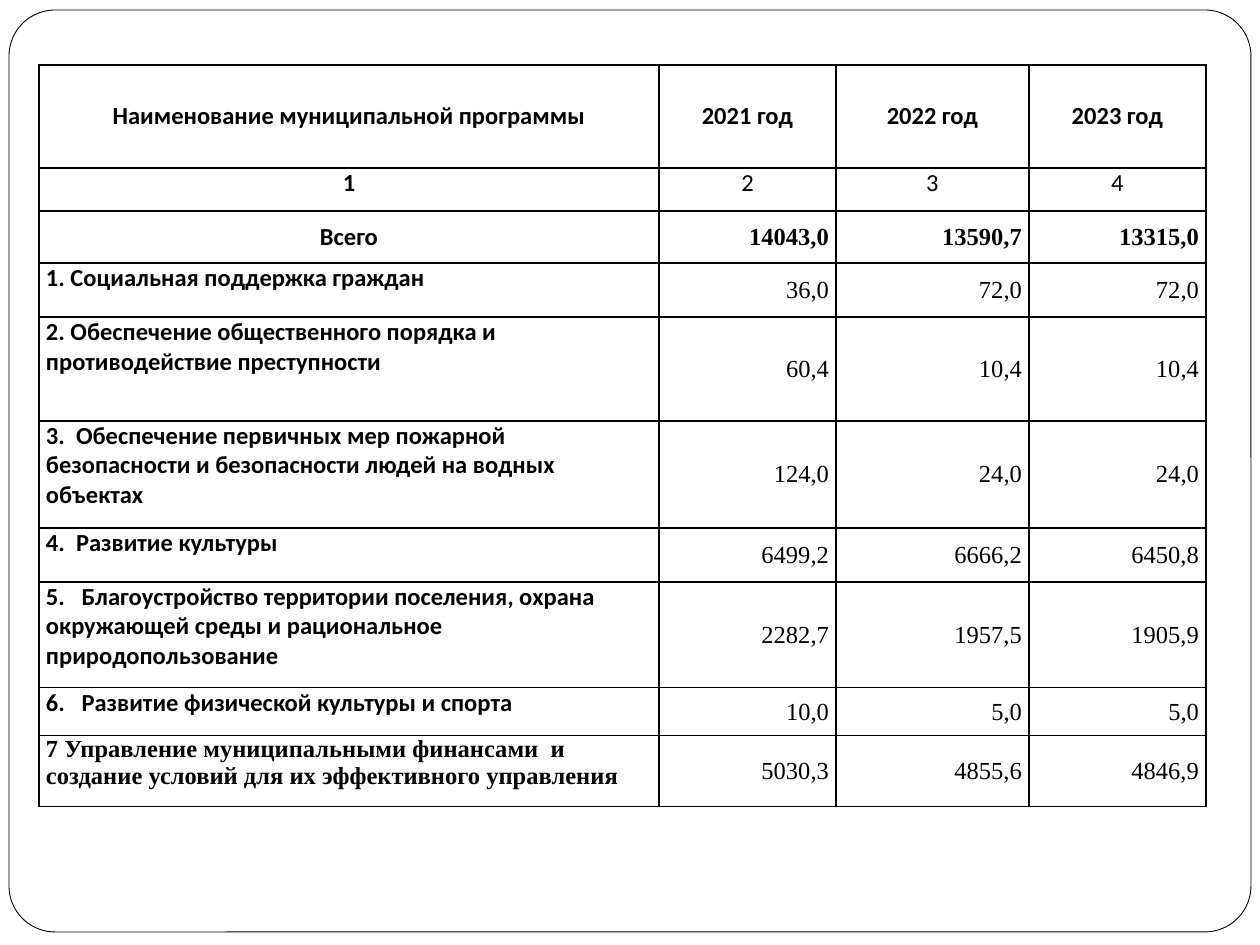
from lxml import etree
from pptx import Presentation
from pptx.dml.color import RGBColor
from pptx.enum.shapes import MSO_SHAPE
from pptx.enum.text import MSO_ANCHOR, PP_ALIGN
from pptx.oxml.ns import qn
from pptx.util import Pt

PX = 914400 / 126
ROUND_RECT = MSO_SHAPE.ROUNDED_RECTANGLE
TOP, MIDDLE = MSO_ANCHOR.TOP, MSO_ANCHOR.MIDDLE
LEFT, CENTER, RIGHT = PP_ALIGN.LEFT, PP_ALIGN.CENTER, PP_ALIGN.RIGHT
COLORS = {"paper": "FFFFFF", "ink": "000000"}
SANS, SERIF = "Calibri", "Times New Roman"
BLANK_LAYOUT = 6

COLUMN_WIDTHS = [620, 177, 193, 177]
ROW_HEIGHTS = [103, 43, 52, 54, 104, 107, 54, 106, 48, 71]
HEADER_ROW, NUMBER_ROW, TOTAL_ROW = 0, 1, 2
LAST_ROW = len(ROW_HEIGHTS) - 1
BUDGET = [
    ["Наименование муниципальной программы", "2021 год", "2022 год", "2023 год"],
    ["1", "2", "3", "4"],
    ["Всего", "14043,0", "13590,7", "13315,0"],
    ["1. Социальная поддержка граждан", "36,0", "72,0", "72,0"],
    ["2. Обеспечение общественного порядка и противодействие преступности",
     "60,4", "10,4", "10,4"],
    ["3.  Обеспечение первичных мер пожарной безопасности и безопасности "
     "людей на водных объектах", "124,0", "24,0", "24,0"],
    ["4.  Развитие культуры", "6499,2", "6666,2", "6450,8"],
    ["5.   Благоустройство территории поселения, охрана окружающей среды и "
     "рациональное природопользование", "2282,7", "1957,5", "1905,9"],
    ["6.   Развитие физической культуры и спорта", "10,0", "5,0", "5,0"],
    ["7 Управление муниципальными финансами  и создание условий для их "
     "эффективного управления", "5030,3", "4855,6", "4846,9"],
]


def px(length):
    return round(length * PX)


def color(name):
    return RGBColor.from_string(COLORS[name])


def add_frame(slide, left, top, width, height):
    frame = slide.shapes.add_shape(ROUND_RECT, px(left), px(top), px(width), px(height))
    frame.adjustments[0] = 0.05
    frame.shadow.inherit = False
    frame.fill.solid()
    frame.fill.fore_color.rgb = color("paper")
    frame.line.color.rgb = color("ink")
    frame.line.width = Pt(0.5)


def add_borders(cell):
    properties = cell._tc.get_or_add_tcPr()
    for position, side in enumerate(("a:lnL", "a:lnR", "a:lnT", "a:lnB")):
        line = etree.Element(qn(side), w=str(Pt(1)))
        fill = etree.SubElement(line, qn("a:solidFill"))
        etree.SubElement(fill, qn("a:srgbClr"), val=COLORS["ink"])
        properties.insert(position, line)


def cell_style(row, column):
    is_label = column == 0
    is_program = row > TOTAL_ROW
    if row <= NUMBER_ROW or (is_label and not is_program):
        align = CENTER
    else:
        align = LEFT if is_label else RIGHT
    anchor = TOP if row == NUMBER_ROW or (is_label and is_program) else MIDDLE
    bold = is_label or row in (HEADER_ROW, TOTAL_ROW)
    is_serif = row == LAST_ROW or (not is_label and row >= TOTAL_ROW)
    return align, anchor, bold, SERIF if is_serif else SANS


def fill_cell(cell, text, align, anchor, bold, font_name):
    cell.text = text
    cell.vertical_anchor = anchor
    cell.margin_left = cell.margin_right = px(7)
    cell.margin_top = cell.margin_bottom = 0
    cell.fill.background()
    add_borders(cell)
    paragraph = cell.text_frame.paragraphs[0]
    paragraph.alignment = align
    paragraph.font.name = font_name
    paragraph.font.size = Pt(14)
    paragraph.font.bold = bold
    paragraph.font.color.rgb = color("ink")


def add_budget_table(slide, left, top):
    budget = slide.shapes.add_table(
        len(ROW_HEIGHTS), len(COLUMN_WIDTHS), px(left), px(top),
        px(sum(COLUMN_WIDTHS)), px(sum(ROW_HEIGHTS))).table
    budget.first_row = budget.horz_banding = False
    for table_column, width in zip(budget.columns, COLUMN_WIDTHS):
        table_column.width = px(width)
    for table_row, height in zip(budget.rows, ROW_HEIGHTS):
        table_row.height = px(height)
    for row, texts in enumerate(BUDGET):
        for column, text in enumerate(texts):
            fill_cell(budget.cell(row, column), text, *cell_style(row, column))


def main():
    presentation = Presentation()
    presentation.slide_width, presentation.slide_height = px(1260), px(945)
    slide = presentation.slides.add_slide(presentation.slide_layouts[BLANK_LAYOUT])
    add_frame(slide, 9, 10, 1242, 922)
    add_budget_table(slide, 39, 65)
    presentation.save("out.pptx")


if __name__ == "__main__":
    main()
